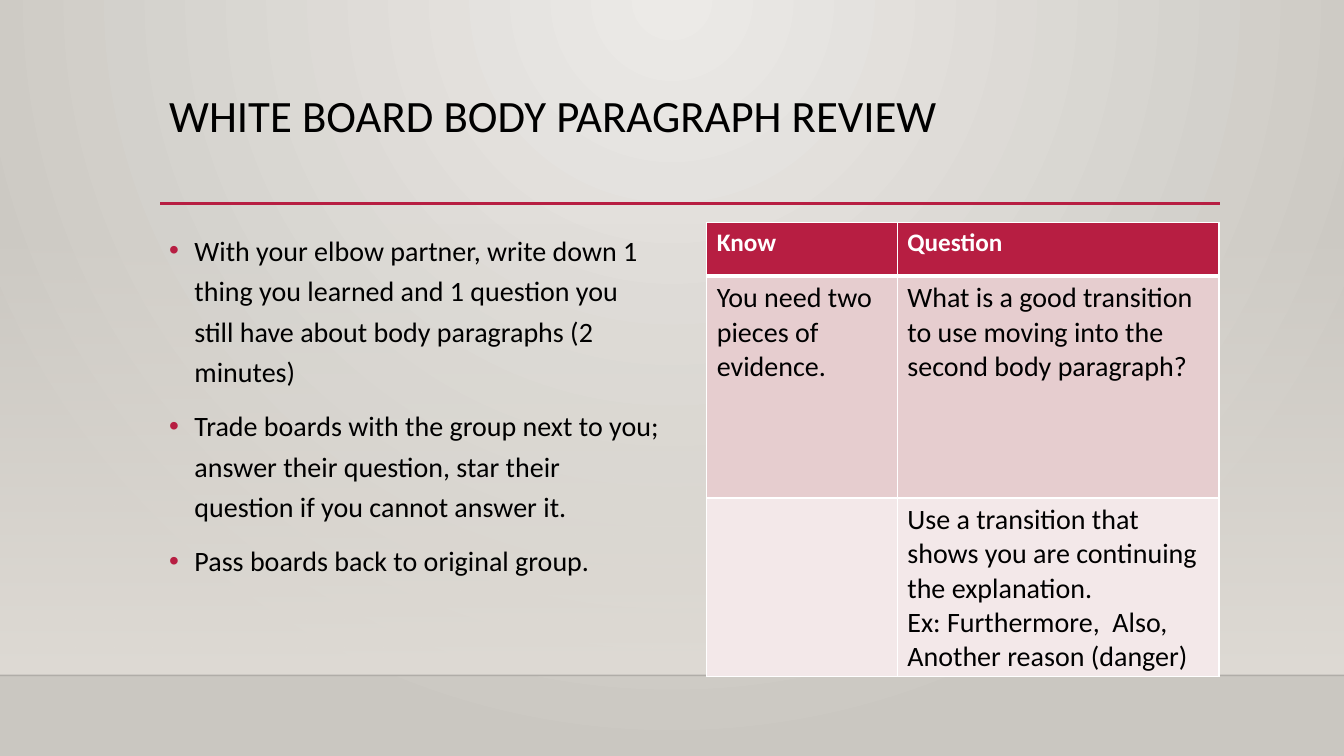
from lxml import etree
from pptx import Presentation
from pptx.dml.color import RGBColor
from pptx.enum.shapes import MSO_CONNECTOR, MSO_SHAPE
from pptx.enum.text import MSO_ANCHOR, PP_ALIGN
from pptx.oxml.ns import qn
from pptx.util import Inches, Pt

STRAIGHT = MSO_CONNECTOR.STRAIGHT
RECTANGLE = MSO_SHAPE.RECTANGLE
TOP = MSO_ANCHOR.TOP
LEFT = PP_ALIGN.LEFT

BLACK = RGBColor(0x00, 0x00, 0x00)
WHITE = RGBColor(0xFF, 0xFF, 0xFF)
CRIMSON = RGBColor(0xB7, 0x1E, 0x42)
ROSE = RGBColor(0xE6, 0xCD, 0xCF)
PALE_ROSE = RGBColor(0xF3, 0xE8, 0xE9)
GLOW = RGBColor(0xEC, 0xEA, 0xE7)
STONE = RGBColor(0xCA, 0xC7, 0xC1)
SAND = RGBColor(0xDF, 0xDB, 0xD5)

FONT = "Calibri"
SLIDE_W, SLIDE_H = 13.33, 7.5
FLOOR_Y = 6.7

STEPS = [
    "With your elbow partner, write down 1 thing you learned and 1 question "
    "you still have about body paragraphs (2 minutes)",
    "Trade boards with the group next to you; answer their question, star "
    "their question if you cannot answer it.",
    "Pass boards back to original group.",
]
BOARD_COLUMNS = [1.89, 3.19]
# Each row: height, fill, cells; each cell is a list of paragraphs.
BOARD_ROWS = [
    (0.53, CRIMSON, [["Know"], ["Question"]]),
    (2.2, ROSE, [
        ["You need two pieces of evidence."],
        ["What is a good transition to use moving into the second body paragraph?"],
    ]),
    (1.76, PALE_ROSE, [
        [],
        ["Use a transition that shows you are continuing the explanation.",
         "Ex: Furthermore,  Also, Another reason (danger)"],
    ]),
]


def add_child(parent, tag, **attributes):
    return etree.SubElement(parent, qn(tag), attributes)


def set_alpha(fill_owner, percent):
    """Set the opacity of the first colour found in an element."""
    color = next(fill_owner.iter(qn("a:srgbClr")))
    add_child(color, "a:alpha", val=str(percent * 1000))


def set_gradient(fill, start, end):
    """Apply a two-stop gradient and return its XML element."""
    fill.gradient()
    for stop, color, position in zip(fill.gradient_stops, (start, end), (0, 1)):
        stop.color.rgb = color
        stop.position = position
    return fill.gradient_stops[0]._gs.getparent().getparent()


def add_text(paragraph, text, size, color, bold=False):
    run = paragraph.add_run()
    run.text = text
    run.font.name = FONT
    run.font.size = Pt(size)
    run.font.bold = bold
    run.font.color.rgb = color


def add_rule(slide, x1, x2, y, color, width):
    rule = slide.shapes.add_connector(
        STRAIGHT, Inches(x1), Inches(y), Inches(x2), Inches(y))
    rule.line.color.rgb = color
    rule.line.width = Pt(width)
    add_child(rule._element.spPr, "a:effectLst")
    return rule


def add_text_frame(slide, left, top, width, height):
    box = slide.shapes.add_textbox(
        Inches(left), Inches(top), Inches(width), Inches(height))
    frame = box.text_frame
    frame.word_wrap = True
    frame.vertical_anchor = TOP
    return frame


def build_backdrop(slide):
    """Radial glow, a wall that fades in, and the floor edge."""
    glow = set_gradient(slide.background.fill, GLOW, STONE)
    glow.remove(glow.find(qn("a:lin")))
    circle = add_child(glow, "a:path", path="circle")
    add_child(circle, "a:fillToRect", l="43000", t="0", r="43000", b="100000")

    wall_top = 2.21
    wall = slide.shapes.add_shape(
        RECTANGLE, 0, Inches(wall_top), Inches(SLIDE_W), Inches(FLOOR_Y - wall_top))
    wall.shadow.inherit = False
    wall.line.fill.background()
    fade = set_gradient(wall.fill, SAND, SAND)
    fade.find(qn("a:lin")).set("ang", "5400000")
    set_alpha(fade, 0)

    floor_edge = add_rule(slide, 0, SLIDE_W, FLOOR_Y, BLACK, 1)
    set_alpha(floor_edge.line._ln, 20)


def build_title(slide, left, top, width, height):
    add_rule(slide, left + 0.01, left + 10.52, top + 1.14, CRIMSON, 2.5)
    paragraph = add_text_frame(slide, left, top, width, height).paragraphs[0]
    paragraph.line_spacing = 0.9
    add_text(paragraph, "WHITE BOARD BODY PARAGRAPH REVIEW", 32, BLACK)


def build_steps(slide, left, top, width, height):
    frame = add_text_frame(slide, left, top, width, height)
    for index, step in enumerate(STEPS):
        paragraph = frame.add_paragraph() if index else frame.paragraphs[0]
        paragraph.line_spacing = 1.2
        if index:
            paragraph.space_before = Pt(10)
        properties = paragraph._p.get_or_add_pPr()
        properties.set("marL", str(Inches(0.25)))
        properties.set("indent", str(-Inches(0.25)))
        bullet_color = add_child(properties, "a:buClr")
        add_child(bullet_color, "a:srgbClr", val=str(CRIMSON))
        add_child(properties, "a:buFont", typeface="Arial")
        add_child(properties, "a:buChar", char="•")
        add_text(paragraph, step, 20, BLACK)


def set_borders(cell, bottom_width):
    """White borders, placed ahead of the cell's fill as the schema asks."""
    properties = cell._tc.get_or_add_tcPr()
    sides = [("a:lnL", 1), ("a:lnR", 1), ("a:lnT", 1), ("a:lnB", bottom_width)]
    for index, (tag, width) in enumerate(sides):
        border = add_child(properties, tag, w=str(Pt(width)))
        add_child(add_child(border, "a:solidFill"), "a:srgbClr", val=str(WHITE))
        properties.insert(index, border)


def build_board(slide, left, top, width, height):
    board = slide.shapes.add_table(
        len(BOARD_ROWS), len(BOARD_COLUMNS),
        Inches(left), Inches(top), Inches(width), Inches(height)).table
    for column, column_width in zip(board.columns, BOARD_COLUMNS):
        column.width = Inches(column_width)
    for row_index, (row_height, fill, entries) in enumerate(BOARD_ROWS):
        header = row_index == 0
        size, color = (18, WHITE) if header else (20, BLACK)
        board.rows[row_index].height = Inches(row_height)
        for column_index, lines in enumerate(entries):
            cell = board.cell(row_index, column_index)
            cell.fill.solid()
            cell.fill.fore_color.rgb = fill
            set_borders(cell, 3 if header else 1)
            for line_index, line in enumerate(lines):
                frame = cell.text_frame
                paragraph = frame.add_paragraph() if line_index else frame.paragraphs[0]
                paragraph.alignment = LEFT
                add_text(paragraph, line, size, color, bold=header)


def main():
    presentation = Presentation()
    presentation.slide_width = Inches(SLIDE_W)
    presentation.slide_height = Inches(SLIDE_H)
    slide = presentation.slides.add_slide(presentation.slide_layouts[6])
    build_backdrop(slide)
    build_title(slide, 1.58, 0.88, 10.5, 1.16)
    build_steps(slide, 1.58, 2.2, 5.08, 3.77)
    build_board(slide, 7.01, 2.21, 5.08, 4.49)
    presentation.save("out.pptx")


if __name__ == "__main__":
    main()
